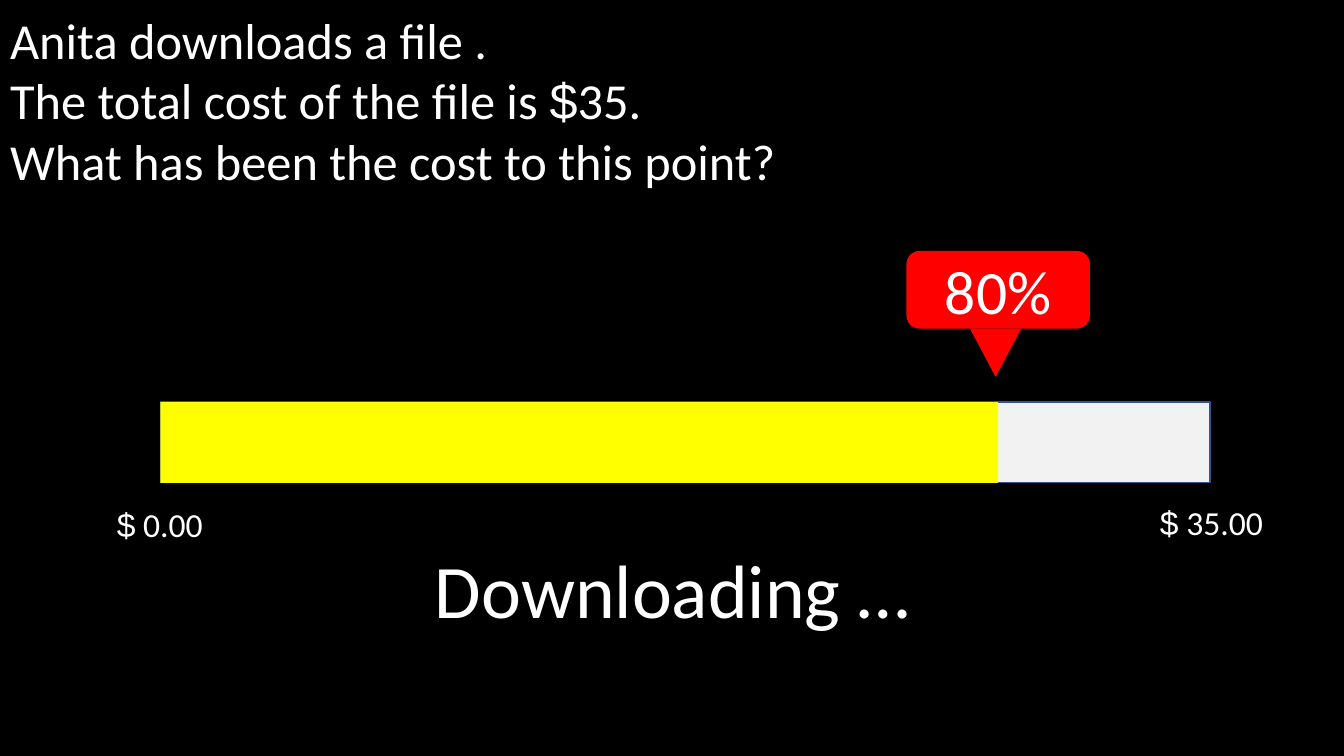
from dataclasses import dataclass

from pptx import Presentation
from pptx.dml.color import RGBColor
from pptx.enum import shapes, text
from pptx.util import Inches, Pt

KIND = shapes.MSO_SHAPE
ALIGN = text.PP_ALIGN


@dataclass(frozen=True)
class Theme:
    back: str = "000000"
    ink: str = "FFFFFF"
    track: str = "F2F2F2"
    edge: str = "325491"
    done: str = "FFFF00"
    badge: str = "FF0000"
    font: str = "Calibri"
    sign: str = "Arial"
    small: int = 24
    body: int = 36
    mark: int = 44
    large: int = 54


@dataclass(frozen=True)
class Box:
    left: float
    top: float
    width: float
    height: float

    def place(self) -> tuple:
        return tuple(Inches(n) for n in (self.left, self.top, self.width, self.height))


@dataclass(frozen=True)
class Block:
    kind: KIND
    box: Box
    fill: str


@dataclass(frozen=True)
class Label:
    words: str
    box: Box
    size: int


THEME = Theme()
BAR = Box(1.59, 3.99, 10.41, 0.8)
TRACK = Block(KIND.RECTANGLE, BAR, THEME.track)
DONE = Block(KIND.RECTANGLE, Box(BAR.left, BAR.top, 8.31, BAR.height), THEME.done)
BADGE = Block(KIND.FLOWCHART_ALTERNATE_PROCESS, Box(8.99, 2.49, 1.82, 0.77), THEME.badge)
POINTER = Block(KIND.FLOWCHART_MERGE, Box(9.62, 3.26, 0.51, 0.48), THEME.badge)
QUESTION = (
    "Anita downloads a file .",
    "The total cost of the file is $35.",
    "What has been the cost to this point?",
)
LABELS = (
    Label("Downloading …", Box(3.86, 5.34, 5.62, 1.01), THEME.large),
    Label("$ 0.00", Box(0.66, 4.95, 1.85, 0.5), THEME.small),
    Label("$ 35.00", Box(11.09, 4.93, 1.85, 0.5), THEME.small),
)


def color(code: str) -> RGBColor:
    return RGBColor.from_string(code)


def write(frame, lines: tuple, size: int, align: ALIGN) -> None:
    """Set one paragraph per line, with the dollar sign in its own font."""
    frame.word_wrap = True
    frame.text = "\n".join(lines)
    for para, line in zip(frame.paragraphs, lines):
        para.alignment = align
        parts = [part for part in line.partition("$") if part]
        para.runs[0].text = parts[0]
        for part in parts[1:]:
            para.add_run().text = part
        for run in para.runs:
            run.font.name = THEME.sign if run.text == "$" else THEME.font
            run.font.size = Pt(size)
            run.font.color.rgb = color(THEME.ink)


def draw(parent, block: Block):
    shape = parent.add_shape(block.kind, *block.box.place())
    shape.shadow.inherit = False
    shape.fill.solid()
    shape.fill.fore_color.rgb = color(block.fill)
    shape.line.fill.background()
    return shape


def ask(title) -> None:
    title.left, title.top, title.width, title.height = Box(0, 0.04, 13.33, 1.92).place()
    frame = title.text_frame
    write(frame, QUESTION, THEME.body, ALIGN.LEFT)
    frame.vertical_anchor = text.MSO_ANCHOR.TOP
    frame.auto_size = text.MSO_AUTO_SIZE.SHAPE_TO_FIT_TEXT


def tag(parent, label: Label) -> None:
    frame = parent.add_textbox(*label.box.place()).text_frame
    write(frame, (label.words,), label.size, ALIGN.CENTER)
    frame.auto_size = text.MSO_AUTO_SIZE.SHAPE_TO_FIT_TEXT


def main() -> None:
    deck = Presentation()
    deck.slide_width, deck.slide_height = Inches(13.33), Inches(7.5)
    slide = deck.slides.add_slide(deck.slide_layouts[5])
    slide.background.fill.solid()
    slide.background.fill.fore_color.rgb = color(THEME.back)

    ask(slide.shapes.title)
    track = draw(slide.shapes, TRACK)
    track.line.color.rgb = color(THEME.edge)
    track.line.width = Pt(1)
    draw(slide.shapes, DONE)

    group = slide.shapes.add_group_shape().shapes
    badge = draw(group, BADGE).text_frame
    write(badge, ("80%",), THEME.mark, ALIGN.CENTER)
    badge.vertical_anchor = text.MSO_ANCHOR.MIDDLE
    draw(group, POINTER)

    for label in LABELS:
        tag(slide.shapes, label)
    deck.save("out.pptx")


if __name__ == "__main__":
    main()
